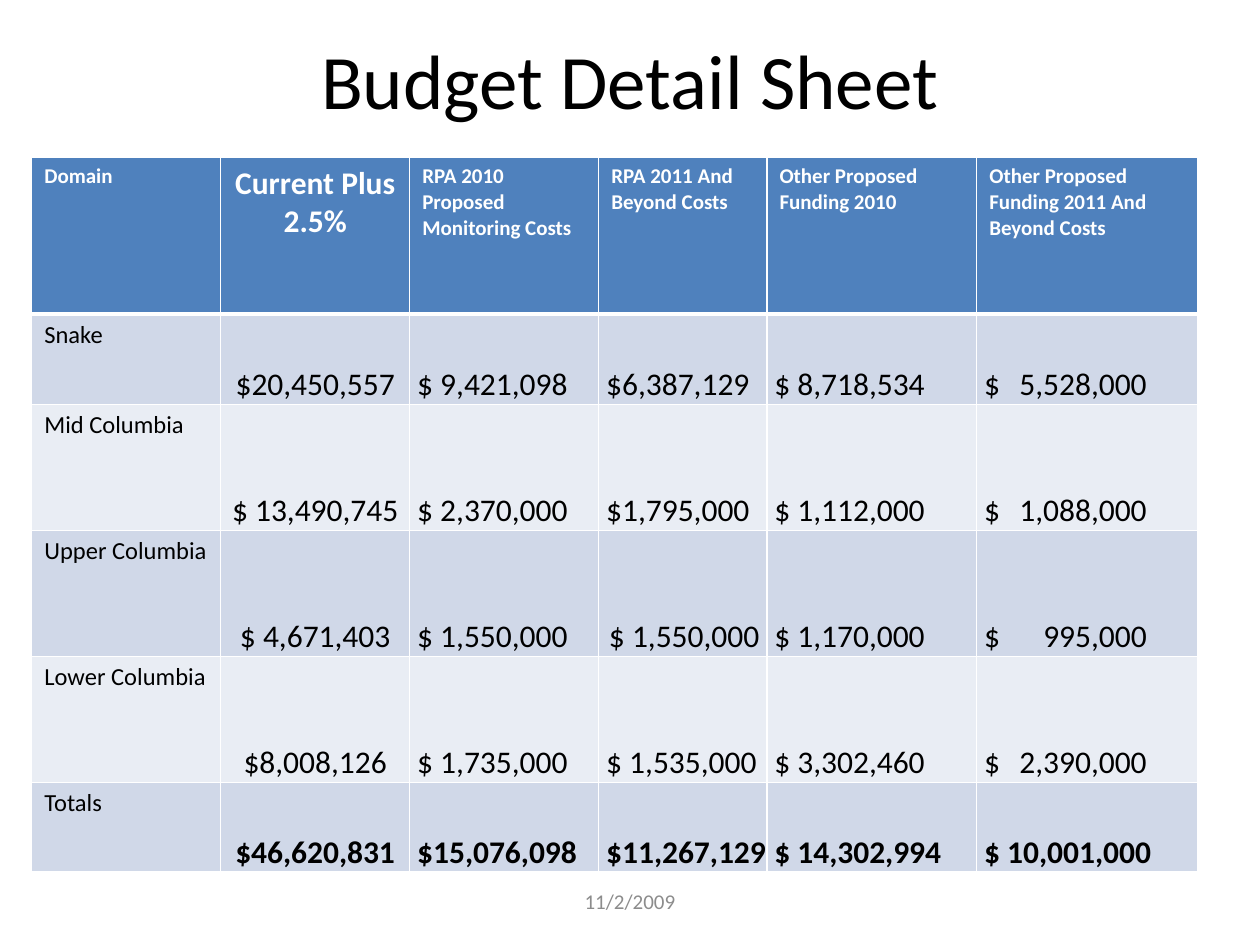
"""Build the Budget Detail Sheet slide."""
from pptx import Presentation
from pptx.dml.color import RGBColor
from pptx.enum.text import MSO_ANCHOR as ANCHOR, PP_ALIGN as ALIGN
from pptx.oxml import parse_xml
from pptx.oxml.ns import nsdecls
from pptx.util import Cm, Pt

WHITE = RGBColor(0xFF, 0xFF, 0xFF)
BLACK = RGBColor(0x00, 0x00, 0x00)
GREY = RGBColor(0x8C, 0x8C, 0x8C)
BLUE = RGBColor(0x4F, 0x81, 0xBD)
BANDS = [RGBColor(0xD0, 0xD8, 0xE8), RGBColor(0xE9, 0xED, 0xF4)]

WIDTHS = [3.81, 3.81, 3.81, 3.39, 4.23, 4.45]
HEIGHTS = [3.15, 1.82, 2.54, 2.54, 2.54, 1.8]
ROWS = [
    ["Domain", "Current Plus 2.5%", "RPA 2010 Proposed Monitoring Costs",
     "RPA 2011 And Beyond Costs", "Other Proposed Funding 2010",
     "Other Proposed Funding 2011 And Beyond Costs"],
    ["Snake", "$20,450,557", "$ 9,421,098", "$6,387,129", "$ 8,718,534", "$\t5,528,000"],
    ["Mid Columbia", "$ 13,490,745", "$ 2,370,000", "$1,795,000", "$ 1,112,000", "$\t1,088,000"],
    ["Upper Columbia", "$ 4,671,403", "$ 1,550,000", "$ 1,550,000", "$ 1,170,000", "$\t995,000"],
    ["Lower Columbia", "$8,008,126", "$ 1,735,000", "$ 1,535,000", "$ 3,302,460", "$\t2,390,000"],
    ["Totals", "$46,620,831", "$15,076,098", "$11,267,129", "$ 14,302,994", "$ 10,001,000"],
]


def style(p, text, size, color, align=ALIGN.LEFT, bold=False):
    p.add_run().text = text
    p.alignment = align
    p.font.name = "Calibri"
    p.font.size = Pt(size)
    p.font.bold = bold
    p.font.color.rgb = color


def add_borders(cell, widths):
    for i, (side, width) in enumerate(widths.items()):
        cell._tc.get_or_add_tcPr().insert(i, parse_xml(
            f'<a:ln{side} {nsdecls("a")} w="{Pt(width)}"><a:solidFill>'
            f'<a:srgbClr val="{WHITE}"/></a:solidFill></a:ln{side}>'))


prs = Presentation()
prs.slide_width, prs.slide_height = Cm(25.4), Cm(19.05)
s = prs.slides.add_slide(prs.slide_layouts[6])

for text, box, size, color in [
    ("Budget Detail Sheet", (1.27, 0, 22.86, 3.18), 44, BLACK),
    ("11/2/2009", (8.68, 17.65, 8.04, 1.02), 12, GREY),
]:
    tf = s.shapes.add_textbox(*[Cm(v) for v in box]).text_frame
    tf.word_wrap = True
    tf.vertical_anchor = ANCHOR.MIDDLE
    style(tf.paragraphs[0], text, size, color, ALIGN.CENTER)

table = s.shapes.add_table(len(ROWS), len(WIDTHS), Cm(0.64), Cm(3.18),
                           Cm(sum(WIDTHS)), Cm(sum(HEIGHTS))).table
for column, width in zip(table.columns, WIDTHS):
    column.width = Cm(width)
for row, height in zip(table.rows, HEIGHTS):
    row.height = Cm(height)

for i, values in enumerate(ROWS):
    header, total = i == 0, values[0] == "Totals"
    for j, text in enumerate(values):
        cell = table.cell(i, j)
        p = cell.text_frame.paragraphs[0]
        align = ALIGN.CENTER if j == 1 else ALIGN.LEFT
        if (values[0], j) == ("Upper Columbia", 3):
            align = ALIGN.RIGHT
        if header:
            style(p, text, 18 if j == 1 else 12, WHITE, align, True)
        elif j == 0:
            style(p, text, 14, BLACK)
        else:
            style(p, text, 18, BLACK, align, total)
            cell.vertical_anchor = ANCHOR.BOTTOM
            cell.margin_top = cell.margin_bottom = 0
            cell.margin_left = Cm(0.15)
            cell.margin_right = 0 if align == ALIGN.LEFT else Cm(0.15)
        if "\t" in text:
            p._p.get_or_add_pPr().insert(0, parse_xml(
                f'<a:tabLst {nsdecls("a")}><a:tab pos="{Cm(3.28)}" algn="r"/></a:tabLst>'))
        cell.fill.solid()
        cell.fill.fore_color.rgb = BLUE if header else BANDS[(i - 1) % 2]
        add_borders(cell, {"L": 1, "R": 1, "T": 3 if i == 1 else 1, "B": 3 if header else 1})

prs.save("out.pptx")
